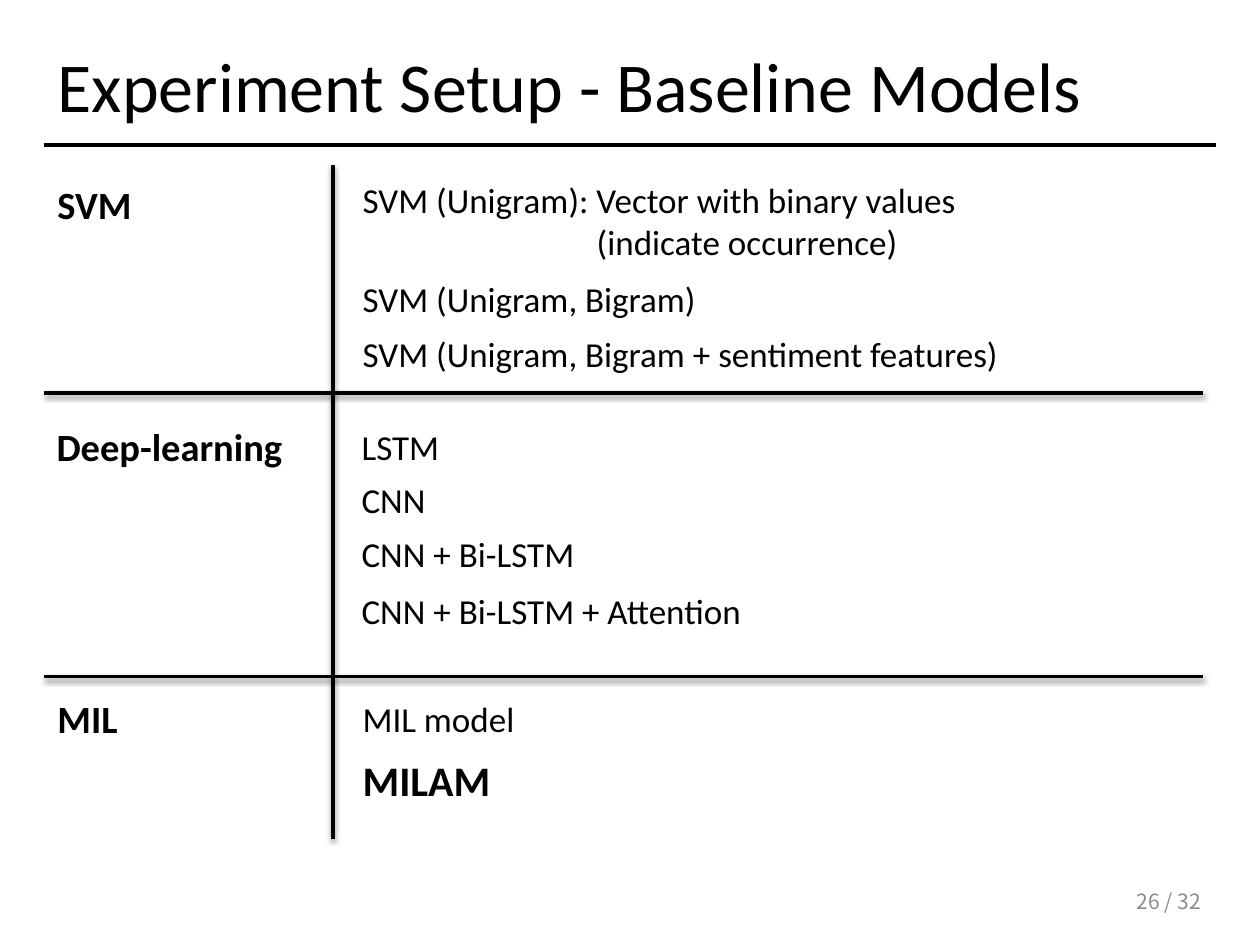
from dataclasses import dataclass

from lxml import etree
from pptx import Presentation
from pptx.dml.color import RGBColor
from pptx.enum.shapes import MSO_CONNECTOR
from pptx.enum.text import MSO_ANCHOR, MSO_AUTO_SIZE, PP_ALIGN
from pptx.oxml.ns import qn
from pptx.slide import Slide
from pptx.text.text import TextFrame
from pptx.util import Cm, Pt

STRAIGHT = MSO_CONNECTOR.STRAIGHT
TOP, MIDDLE, BOTTOM = MSO_ANCHOR.TOP, MSO_ANCHOR.MIDDLE, MSO_ANCHOR.BOTTOM
LEFT, RIGHT = PP_ALIGN.LEFT, PP_ALIGN.RIGHT
NO_FIT, GROW = MSO_AUTO_SIZE.NONE, MSO_AUTO_SIZE.SHAPE_TO_FIT_TEXT

COLORS = {"ink": "000000", "page_number": "8C8C8C"}
TITLE_ONLY = 5
RULE_LEFT = 0.89
HANGING = 4.72


@dataclass
class Style:
    size: float
    bold: bool = False
    color: str = "ink"
    font: str = "Calibri"
    align: PP_ALIGN = LEFT
    anchor: MSO_ANCHOR = TOP
    fit: MSO_AUTO_SIZE = GROW
    hanging: float = 0


@dataclass
class Item:
    text: str
    top: float
    height: float = 1.12
    highlighted: bool = False


@dataclass
class Section:
    label: str
    label_left: float
    label_top: float
    label_width: float
    items_left: float
    items: list[Item]


@dataclass
class Rule:
    start: tuple[float, float]
    end: tuple[float, float]
    shadow: bool = True


TITLE = Style(40, anchor=BOTTOM, fit=NO_FIT)
LABEL = Style(22, bold=True)
MODEL = Style(20, hanging=HANGING)
HIGHLIGHT = Style(24, bold=True, hanging=HANGING)
PAGE_NUMBER = Style(12, color="page_number", font="Noto Sans CJK KR",
                    align=RIGHT, anchor=MIDDLE, fit=NO_FIT)

SECTIONS = [
    Section("SVM", 0.91, 3.53, 4.39, 7.06, [
        Item("SVM (Unigram): Vector with binary values \n(indicate occurrence)", 3.48, 1.96),
        Item("SVM (Unigram, Bigram)", 5.46),
        Item("SVM (Unigram, Bigram + sentiment features)", 6.58),
    ]),
    Section("Deep-learning", 0.89, 8.41, 5.41, 7.04, [
        Item("LSTM", 8.46),
        Item("CNN", 9.53),
        Item("CNN + Bi-LSTM", 10.62),
        Item("CNN + Bi-LSTM + Attention", 11.76),
    ]),
    Section("MIL", 0.91, 13.89, 5.41, 7.06, [
        Item("MIL model", 13.94),
        Item("MILAM", 15.09, 1.27, highlighted=True),
    ]),
]

RULES = [
    Rule((RULE_LEFT, 2.92), (24.51, 2.92), shadow=False),
    Rule((6.71, 3.33), (6.71, 16.92)),
    Rule((RULE_LEFT, 7.92), (24.26, 7.92)),
    Rule((RULE_LEFT, 13.64), (24.26, 13.64)),
]


def color(name: str) -> RGBColor:
    return RGBColor.from_string(COLORS[name])


def write_text(frame: TextFrame, text: str, style: Style) -> None:
    frame.word_wrap = True
    frame.auto_size = style.fit
    frame.vertical_anchor = style.anchor
    para = frame.paragraphs[0]
    para.text = text
    para.alignment = style.align
    if style.hanging:
        properties = para._p.get_or_add_pPr()
        properties.set("marL", str(Cm(style.hanging)))
        properties.set("indent", str(-Cm(style.hanging)))
    for span in para.runs:
        span.font.name = style.font
        span.font.size = Pt(style.size)
        span.font.bold = style.bold
        span.font.color.rgb = color(style.color)


def add_text(page: Slide, text: str, left: float, top: float,
             width: float, height: float, style: Style) -> None:
    box = page.shapes.add_textbox(Cm(left), Cm(top), Cm(width), Cm(height))
    write_text(box.text_frame, text, style)


def add_title(page: Slide, text: str) -> None:
    title = page.shapes.title
    title.left, title.top = Cm(0.91), Cm(0.71)
    title.width, title.height = Cm(23.6), Cm(1.96)
    write_text(title.text_frame, text, TITLE)


def add_rule(page: Slide, rule: Rule) -> None:
    line = page.shapes.add_connector(STRAIGHT, *map(Cm, rule.start + rule.end))
    line.line.color.rgb = color("ink")
    line.line.width = Pt(2)
    effects = etree.SubElement(line._element.spPr, qn("a:effectLst"))
    if rule.shadow:
        shadow = etree.SubElement(effects, qn("a:outerShdw"), blurRad=str(Pt(3.1)),
                                  dist=str(Pt(1.6)), dir="5400000", rotWithShape="0")
        tone = etree.SubElement(shadow, qn("a:srgbClr"), val=COLORS["ink"])
        etree.SubElement(tone, qn("a:alpha"), val="38000")


def add_section(page: Slide, section: Section) -> None:
    add_text(page, section.label, section.label_left, section.label_top,
             section.label_width, 1.19, LABEL)
    for item in section.items:
        style = HIGHLIGHT if item.highlighted else MODEL
        add_text(page, item.text, section.items_left, item.top, 17.22, item.height, style)


def main() -> None:
    deck = Presentation()
    deck.slide_width, deck.slide_height = Cm(25.4), Cm(19.05)
    page = deck.slides.add_slide(deck.slide_layouts[TITLE_ONLY])
    add_title(page, "Experiment Setup - Baseline Models")
    for section in SECTIONS:
        add_section(page, section)
    for rule in RULES:
        add_rule(page, rule)
    add_text(page, "26 / 32", 18.54, 17.65, 5.92, 1.02, PAGE_NUMBER)
    deck.save("out.pptx")


if __name__ == "__main__":
    main()
